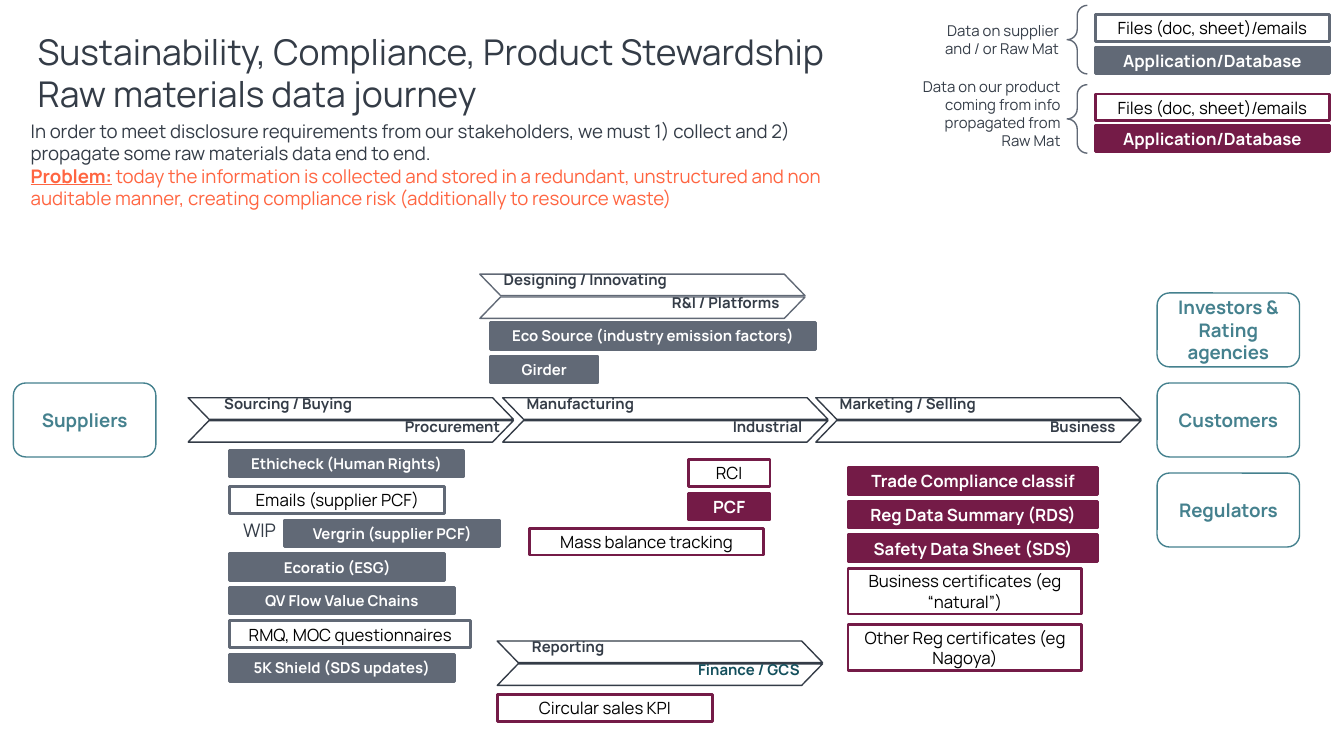
from pptx import Presentation
from pptx import util as u
from pptx.dml.color import RGBColor
from pptx.enum import shapes, text

Inches = u.Inches
COLORS = {
    "white": "FFFFFF", "black": "000000", "ink": "343C47", "slate": "616976",
    "wine": "741B47", "teal": "45818E", "deep": "134F5C", "orange": "FF6541",
}
LEFT, CENTER, RIGHT = text.PP_ALIGN.LEFT, text.PP_ALIGN.CENTER, text.PP_ALIGN.RIGHT
FIXED, GROW = text.MSO_AUTO_SIZE.NONE, text.MSO_AUTO_SIZE.SHAPE_TO_FIT_TEXT
TOP, MIDDLE = text.MSO_ANCHOR.TOP, text.MSO_ANCHOR.MIDDLE

deck = Presentation()
deck.slide_width = Inches(10)
deck.slide_height = deck.slide_width * 9 // 16
slide = deck.slides.add_slide(deck.slide_layouts[5])


def write(holder, paragraphs, size, align=LEFT, anchor=TOP, inset=0.1, fit=GROW):
    frame = holder.text_frame
    frame.word_wrap = True
    frame.auto_size = fit
    frame.vertical_anchor = anchor
    frame.margin_left = frame.margin_right = Inches(inset)
    frame.margin_top = frame.margin_bottom = Inches(inset)
    for index, runs in enumerate(paragraphs):
        paragraph = frame.add_paragraph() if index else frame.paragraphs[0]
        paragraph.alignment = align
        for words, color, bold, underline in runs:
            run = paragraph.add_run()
            run.text = words
            run.font.name = "Manrope"
            run.font.size = u.Pt(size)
            run.font.bold = bold
            run.font.underline = underline
            run.font.color.rgb = RGBColor.from_string(COLORS[color])


def draw(kind, place, fill, line, width):
    shape = slide.shapes.add_shape(kind, *map(Inches, place))
    shape.shadow.inherit = False
    if fill:
        shape.fill.solid()
        shape.fill.fore_color.rgb = RGBColor.from_string(COLORS[fill])
    else:
        shape.fill.background()
    shape.line.color.rgb = RGBColor.from_string(COLORS[line])
    shape.line.width = u.Pt(width)
    return shape


title = slide.shapes.title
title.left, title.top, title.width, title.height = map(Inches, (0.28, 0.22, 6.67, 0.64))
write(title, [
    [("Sustainability, Compliance, Product Stewardship", "ink", False, False)],
    [("Raw materials data journey", "ink", False, False)],
], 19, inset=0, fit=FIXED)

intro = slide.shapes.add_textbox(*map(Inches, (0.13, 0.79, 6.41, 0.88)))
write(intro, [
    [("In order to meet disclosure requirements from our stakeholders, we must 1) collect "
      "and 2) propagate some raw materials data end to end.", "ink", False, False)],
    [("Problem:", "orange", True, True),
     (" today the information is collected and stored in a redundant, unstructured and non "
      "auditable manner, creating compliance risk (additionally to resource waste)",
      "orange", False, False)],
], 10)

stages = [
    (3.74, 2.96, "white", "ink", "Manufacturing", 3.82, "Industrial", 3.9, "ink"),
    (1.4, 2.96, "white", "ink", "Sourcing / Buying", 1.57, "Procurement", 1.65, "ink"),
    (6.07, 2.96, "white", "ink", "Marketing / Selling", 6.15, "Business", 6.23, "ink"),
    (3.57, 2.04, None, "slate", "Designing / Innovating", 3.65, "R&I / Platforms", 3.73, "ink"),
    (3.7, 4.77, "white", "ink", "Reporting", 3.86, "Finance / GCS", 3.88, "deep"),
]
for left, top, fill, line, *_ in stages:
    for half in range(2):
        band = draw(shapes.MSO_SHAPE.PARALLELOGRAM, (left, top + 0.17 * half, 2.42, 0.16),
                    fill, line, 0.75)
        band.adjustments[0] = 0.97
        if half == 0:
            band._element.spPr.xfrm.set("flipH", "1")
for _, top, _, _, activity, activity_left, team, team_left, team_color in stages:
    for words, left, offset, align, color in (
        (activity, activity_left, -0.09, LEFT, "ink"),
        (team, team_left, 0.08, RIGHT, team_color),
    ):
        label = slide.shapes.add_textbox(*map(Inches, (left, top + offset, 2.17, 0.34)))
        write(label, [[(words, color, True, False)]], 8, align)

for party, left, top in (
    ("Suppliers", 0.1, 2.85), ("Investors & Rating agencies", 8.61, 2.18),
    ("Customers", 8.61, 2.85), ("Regulators", 8.61, 3.52),
):
    card = draw(shapes.MSO_SHAPE.ROUNDED_RECTANGLE, (left, top, 1.06, 0.55),
                "white", "teal", 0.75)
    write(card, [[(party, "teal", True, False)]], 10, CENTER, MIDDLE, fit=FIXED)

sources = [
    ("Files (doc, sheet)/emails", 8.15, 0.11, 1.74, 0.2, "slate", "file", 9),
    ("Application/Database", 8.15, 0.35, 1.74, 0.2, "slate", "app", 9),
    ("Files (doc, sheet)/emails", 8.15, 0.7, 1.74, 0.2, "wine", "file", 9),
    ("Application/Database", 8.15, 0.93, 1.74, 0.2, "wine", "app", 9),
    ("Eco Source (industry emission factors)", 3.65, 2.4, 2.42, 0.2, "slate", "app", 8),
    ("Girder", 3.65, 2.65, 0.8, 0.2, "slate", "app", 8),
    ("Ethicheck (Human Rights)", 1.71, 3.35, 1.74, 0.2, "slate", "app", 8),
    ("Emails (supplier PCF)", 1.71, 3.62, 1.6, 0.2, "slate", "file", 9),
    ("Vergrin (supplier PCF)", 2.12, 3.87, 1.6, 0.2, "slate", "app", 8),
    ("Ecoratio (ESG)", 1.71, 4.12, 1.6, 0.2, "slate", "app", 8),
    ("QV Flow Value Chains", 1.71, 4.37, 1.67, 0.2, "slate", "app", 8),
    ("RMQ, MOC questionnaires", 1.71, 4.62, 1.79, 0.2, "slate", "file", 9),
    ("5K Shield (SDS updates)", 1.71, 4.87, 1.67, 0.2, "slate", "app", 8),
    ("RCI", 5.12, 3.42, 0.61, 0.2, "wine", "file", 9),
    ("PCF", 5.12, 3.67, 0.61, 0.2, "wine", "app", 9),
    ("Mass balance tracking", 3.94, 3.93, 1.74, 0.2, "wine", "file", 9),
    ("Circular sales KPI", 3.7, 5.17, 1.6, 0.2, "wine", "file", 9),
    ("Trade Compliance classif", 6.31, 3.48, 1.86, 0.2, "wine", "app", 9),
    ("Reg Data Summary (RDS)", 6.31, 3.73, 1.86, 0.2, "wine", "app", 9),
    ("Safety Data Sheet (SDS)", 6.31, 3.98, 1.86, 0.2, "wine", "app", 9),
    ("Business certificates (eg “natural”)", 6.31, 4.23, 1.74, 0.34, "wine", "file", 9),
    ("Other Reg certificates (eg Nagoya)", 6.31, 4.65, 1.74, 0.34, "wine", "file", 9),
]
for words, left, top, width, height, color, storage, size in sources:
    is_app = storage == "app"
    tag = draw(shapes.MSO_SHAPE.RECTANGLE, (left, top, width, height),
               color if is_app else "white", color, 1.5)
    write(tag, [[(words, "white" if is_app else "black", is_app, False)]], size,
          CENTER, MIDDLE, fit=FIXED)

for top in (0.04, 0.63):
    brace = draw(shapes.MSO_SHAPE.LEFT_BRACE, (7.94, top, 0.15, 0.51), None, "slate", 0.75)
    brace.adjustments[0] = 0.5
    brace.adjustments[1] = 0.5

for words, place, size, align in (
    ("Data on supplier and / or Raw Mat", (6.8, 0.06, 1.18, 0.47), 8, RIGHT),
    ("Data on our product coming from info propagated from Raw Mat",
     (6.7, 0.48, 1.29, 0.88), 8, RIGHT),
    ("WIP", (1.71, 3.78, 0.45, 0.37), 10, LEFT),
):
    note = slide.shapes.add_textbox(*map(Inches, place))
    write(note, [[(words, "ink", False, False)]], size, align)

deck.save("out.pptx")
